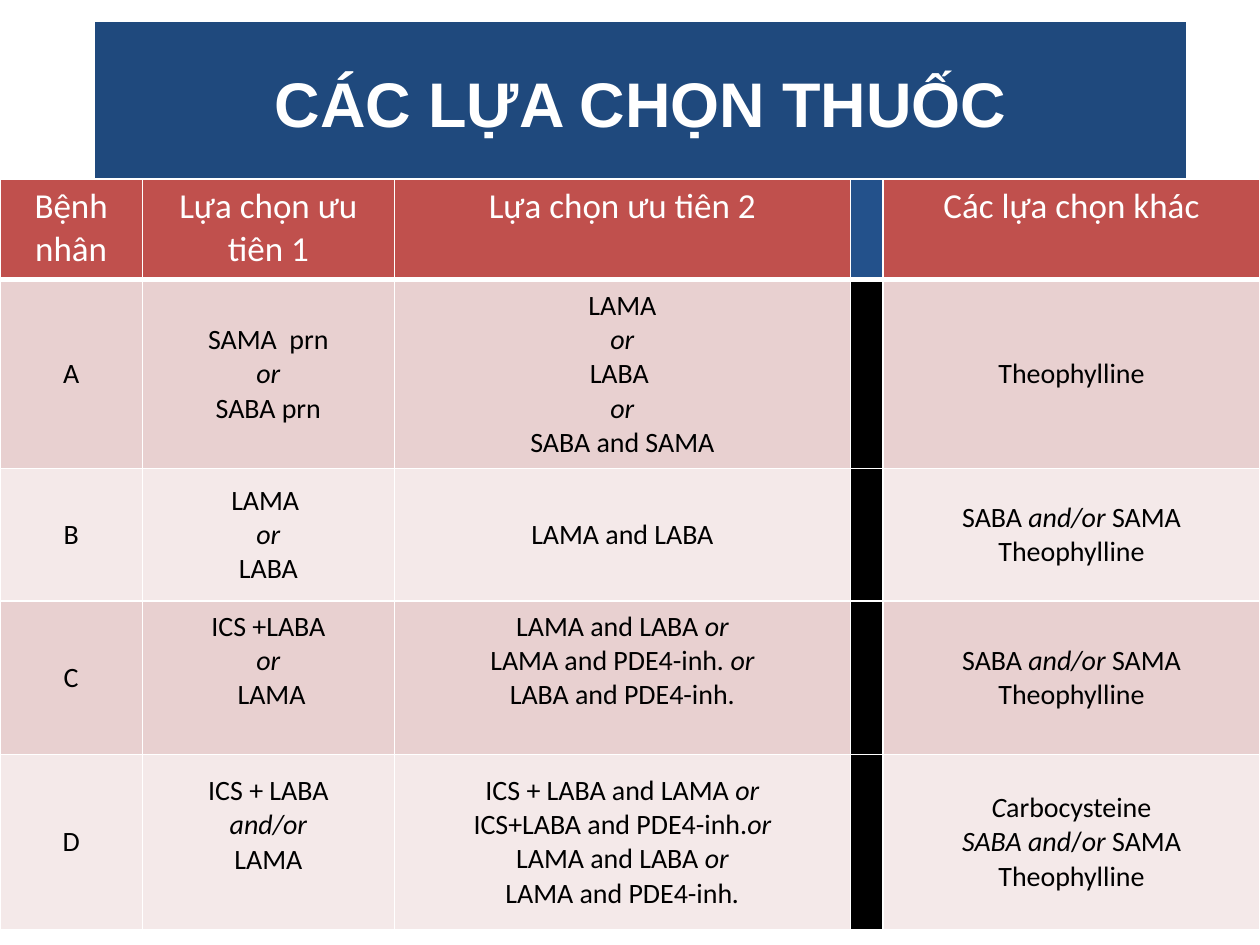
from lxml.etree import SubElement
from pptx import Presentation
from pptx.dml.color import RGBColor
from pptx.enum.text import MSO_ANCHOR, PP_ALIGN
from pptx.oxml.ns import qn
from pptx.util import Inches, Pt

WHITE = RGBColor(0xFF, 0xFF, 0xFF)
BLACK = RGBColor(0, 0, 0)
NAVY = RGBColor(0x1F, 0x49, 0x7D)
BLUE = RGBColor(0x23, 0x51, 0x8B)
RED = RGBColor(0xC0, 0x50, 0x4D)
BANDS = [RGBColor(0xE8, 0xD0, 0xD0), RGBColor(0xF4, 0xE9, 0xE9)]

TITLE = "CÁC LỰA CHỌN THUỐC"
HEADER = ["Bệnh nhân", "Lựa chọn ưu tiên 1", "Lựa chọn ưu tiên 2", "", "Các lựa chọn khác"]
# Text between asterisks is italic; each line is a paragraph.
PATIENTS = [
    ["A", "SAMA  prn\n*or*\nSABA prn",
     "LAMA\n*or*\nLABA \n*or*\nSABA and SAMA", "", "Theophylline"],
    ["B", "LAMA \n*or*\nLABA", "LAMA and LABA", "",
     "SABA *and/or* SAMA\nTheophylline"],
    ["C", "ICS +LABA\n*or*\n LAMA",
     "LAMA and LABA *or*\nLAMA and PDE4-inh*. or*\nLABA and PDE4-inh.", "",
     "SABA *and/or* SAMA\nTheophylline"],
    ["D", "ICS + LABA\n*and/or*\nLAMA",
     "ICS + LABA and LAMA *or*\nICS+LABA and PDE4-inh.*or*\n"
     "LAMA and LABA *or*\nLAMA and PDE4-inh*.*", "",
     "*C*arbocysteine\n*SABA and*/*or* SAMA\nTheophylline"],
]
COL_WIDTHS = [1.13, 2, 3.62, 0.26, 2.99]
ROW_HEIGHTS = [0.8, 1.5, 1.05, 1.22, 1.39]
DIVIDER_COL = 3
RAISED_CELLS = {(3, 1), (3, 2), (4, 1)}  # text sits one line higher


def set_borders(cell, **widths):
    """Draw white borders; widths are points keyed by side (L, R, T, B)."""
    tc_pr = cell._tc.get_or_add_tcPr()
    for side in "LRTB":
        ln = SubElement(tc_pr, qn(f"a:ln{side}"), w=str(Pt(widths.get(side, 1))))
        fill = SubElement(ln, qn("a:solidFill"))
        SubElement(fill, qn("a:srgbClr"), val=str(WHITE))


def write_cell(cell, text, size, color):
    tf = cell.text_frame
    for i, line in enumerate(text.split("\n")):
        p = tf.paragraphs[0] if i == 0 else tf.add_paragraph()
        p.alignment = PP_ALIGN.CENTER
        p.font.size = Pt(size)
        for j, part in enumerate(line.split("*")):
            if part:
                r = p.add_run()
                r.text = part
                r.font.name = "Calibri"
                r.font.size = Pt(size)
                r.font.bold = False
                r.font.italic = j % 2 == 1
                r.font.color.rgb = color


def add_title(slide):
    title = slide.shapes.title
    title.left, title.top = Inches(0.75), Inches(0.17)
    title.width, title.height = Inches(8.67), Inches(1.28)
    title.fill.solid()
    title.fill.fore_color.rgb = NAVY
    title.line.color.rgb = WHITE
    title.line.width = Pt(0.75)
    tf = title.text_frame
    tf.text = TITLE
    tf.vertical_anchor = MSO_ANCHOR.MIDDLE
    p = tf.paragraphs[0]
    p.alignment = PP_ALIGN.CENTER
    font = p.runs[0].font
    font.name, font.size, font.bold = "Arial", Pt(36), True
    font.color.rgb = WHITE


def add_options_table(slide):
    rows = [HEADER] + PATIENTS
    table = slide.shapes.add_table(
        len(rows), len(HEADER), Inches(0), Inches(1.42),
        Inches(sum(COL_WIDTHS)), Inches(sum(ROW_HEIGHTS))).table
    for column, width in zip(table.columns, COL_WIDTHS):
        column.width = Inches(width)
    for row, height in zip(table.rows, ROW_HEIGHTS):
        row.height = Inches(height)

    for r, texts in enumerate(rows):
        is_header = r == 0
        for c, text in enumerate(texts):
            cell = table.cell(r, c)
            set_borders(cell, B=3 if is_header else 1, T=3 if r == 1 else 1)
            cell.fill.solid()
            if c == DIVIDER_COL:
                cell.fill.fore_color.rgb = BLUE if is_header else BLACK
            else:
                cell.fill.fore_color.rgb = RED if is_header else BANDS[(r - 1) % 2]
            cell.vertical_anchor = MSO_ANCHOR.TOP if is_header else MSO_ANCHOR.MIDDLE
            if (r, c) in RAISED_CELLS:
                cell.margin_bottom = Inches(0.32)
            write_cell(cell, text, 20 if is_header else 16, WHITE if is_header else BLACK)


def main():
    prs = Presentation()
    prs.slide_width, prs.slide_height = Inches(10), Inches(7.5)
    slide = prs.slides.add_slide(prs.slide_layouts[5])
    add_title(slide)
    add_options_table(slide)
    prs.save("out.pptx")


if __name__ == "__main__":
    main()
